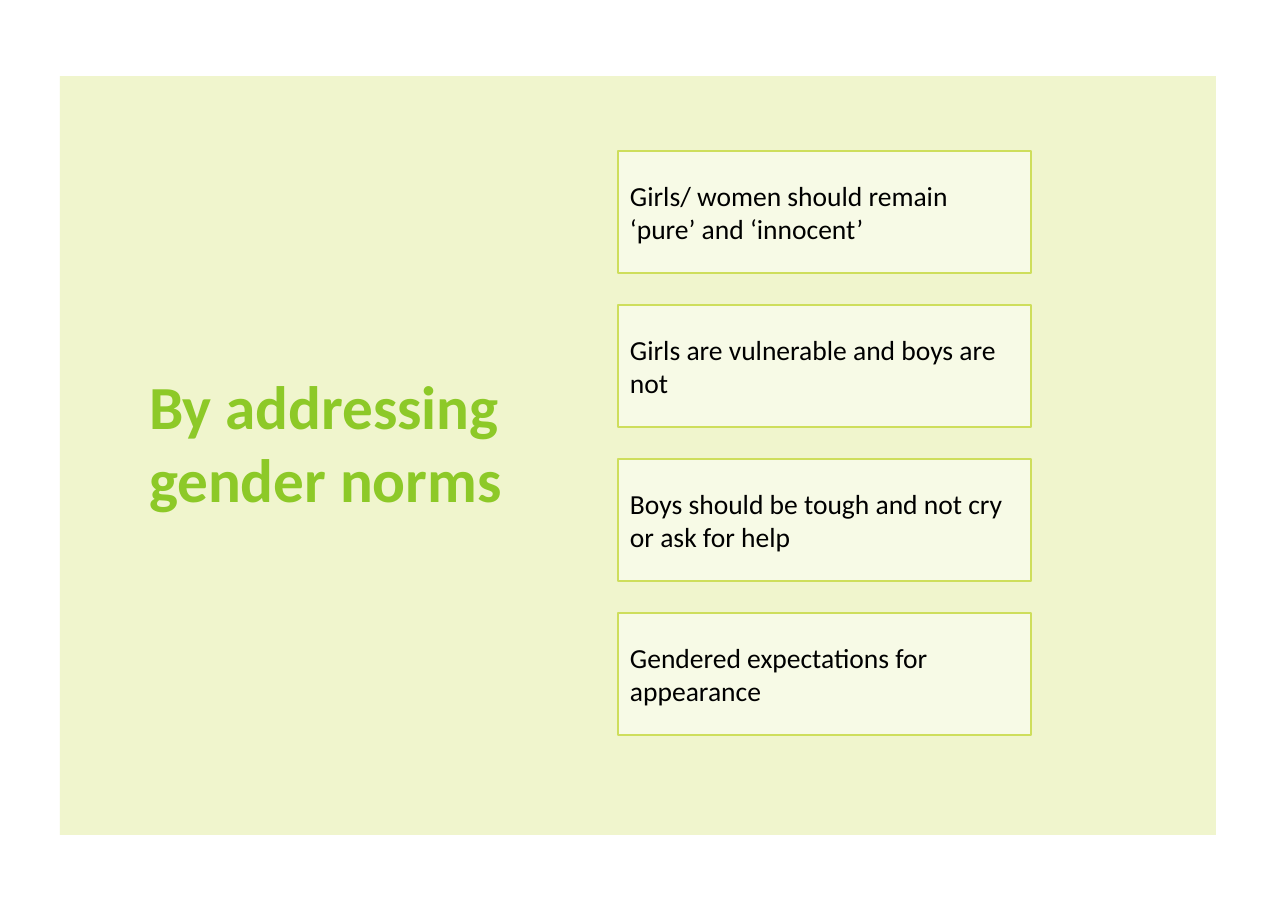
from dataclasses import dataclass

from lxml.etree import SubElement
from pptx import Presentation
from pptx.dml.color import RGBColor
from pptx.enum.shapes import MSO_SHAPE
from pptx.enum.text import MSO_ANCHOR, MSO_AUTO_SIZE, PP_ALIGN
from pptx.oxml.ns import qn
from pptx.util import Pt

TITLE = "By addressing gender norms"
NORMS = [
    "Girls/ women should remain ‘pure’ and ‘innocent’",
    "Girls are vulnerable and boys are not",
    "Boys should be tough and not cry or ask for help",
    "Gendered expectations for appearance",
]

# Lengths in px: left, top, width, height
EMU_PER_PX = 8298
SLIDE_SIZE = (1288, 911)
PANEL_AREA = (60, 76, 1156, 759)
TITLE_AREA = (137, 322, 385, 239)
FIRST_NORM_AREA = (618, 151, 413, 122)
NORM_GAP = 32
TEXT_INSET = 12


@dataclass(frozen=True)
class Theme:
    font: str = "Calibri"
    title_size: int = 40
    body_size: int = 18
    line_width: float = 1.5
    title: RGBColor = RGBColor(0x8D, 0xC9, 0x28)
    body: RGBColor = RGBColor(0, 0, 0)
    lime: RGBColor = RGBColor(0xCE, 0xDE, 0x5C)
    white: RGBColor = RGBColor(0xFF, 0xFF, 0xFF)
    panel_opacity: int = 30
    norm_opacity: int = 50


THEME = Theme()


def px(*lengths):
    return [length * EMU_PER_PX for length in lengths]


def add_rectangle(slide, area, color, opacity):
    """Add an unlined rectangle with a fill of the given percent opacity."""
    shape = slide.shapes.add_shape(MSO_SHAPE.RECTANGLE, *px(*area))
    shape.shadow.inherit = False
    shape.fill.solid()
    shape.fill.fore_color.rgb = color
    color_element = shape.element.spPr.find(f"{qn('a:solidFill')}/{qn('a:srgbClr')}")
    SubElement(color_element, qn("a:alpha"), val=str(opacity * 1000))
    shape.line.fill.background()
    return shape


def write_text(shape, text, size, color, bold=False):
    frame = shape.text_frame
    frame.text = text
    frame.word_wrap = True
    frame.auto_size = MSO_AUTO_SIZE.NONE
    frame.vertical_anchor = MSO_ANCHOR.MIDDLE
    inset = TEXT_INSET * EMU_PER_PX
    frame.margin_left = frame.margin_right = inset
    frame.margin_top = frame.margin_bottom = inset
    paragraph = frame.paragraphs[0]
    paragraph.alignment = PP_ALIGN.LEFT
    paragraph.font.name = THEME.font
    paragraph.font.size = Pt(size)
    paragraph.font.bold = bold
    paragraph.font.color.rgb = color


def main():
    presentation = Presentation()
    presentation.slide_width, presentation.slide_height = px(*SLIDE_SIZE)
    slide = presentation.slides.add_slide(presentation.slide_layouts.get_by_name("Title Only"))

    panel = add_rectangle(slide, PANEL_AREA, THEME.lime, THEME.panel_opacity)
    title = slide.shapes.title
    title.element.addprevious(panel.element)  # keeps the panel behind the title
    title.left, title.top, title.width, title.height = px(*TITLE_AREA)
    write_text(title, TITLE, THEME.title_size, THEME.title, bold=True)

    left, first_top, width, height = FIRST_NORM_AREA
    for index, norm in enumerate(NORMS):
        top = first_top + index * (height + NORM_GAP)
        box = add_rectangle(slide, (left, top, width, height), THEME.white, THEME.norm_opacity)
        box.line.color.rgb = THEME.lime
        box.line.width = Pt(THEME.line_width)
        write_text(box, norm, THEME.body_size, THEME.body)

    presentation.save("out.pptx")


if __name__ == "__main__":
    main()
